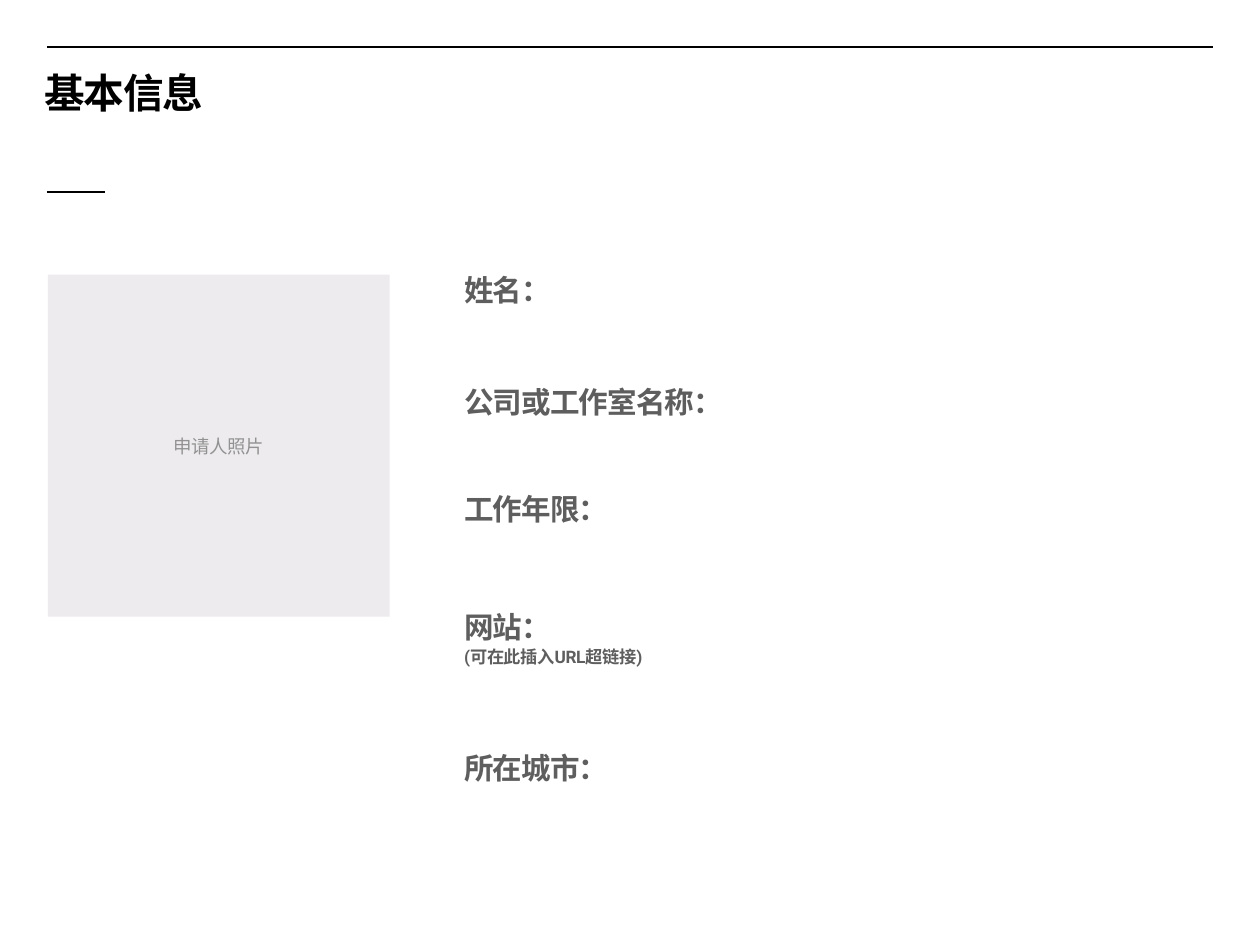
import pptx
import pptx.util
import pptx.dml.color
import pptx.enum.shapes
import pptx.enum.text
import pptx.oxml.ns
import lxml.etree

# The page is a grid of 128 columns by 96 rows of square cells.
COLUMNS, ROWS = 128, 96
CELL = pptx.util.Inches(1 / 9)
FONT = "Roboto"
BLACK, LABEL_GREY, CAPTION_GREY, PHOTO_GREY = "000000", "5E5E5E", "929292", "EDEBEE"
ALIGN = pptx.enum.text.PP_ALIGN
ANCHOR = pptx.enum.text.MSO_ANCHOR

# Each field: row below the top of the list, columns, rows, note
FIELDS = [
    ("姓名：", 0, 78, 5.1, ""),
    ("公司或工作室名称：", 11.4, 78, 5.1, ""),
    ("工作年限：", 22.23, 78, 5.1, ""),
    ("网站：", 34.25, 28, 8, "(可在此插入URL超链接)"),
    ("所在城市：", 48.6, 78, 5.1, ""),
]


def cells(count):
    return round(count * CELL)


def color(value):
    return pptx.dml.color.RGBColor.from_string(value)


def place(shape, box):
    shape.left, shape.top, shape.width, shape.height = map(cells, box)


def prepare_frame(shape, anchor=ANCHOR.TOP):
    frame = shape.text_frame
    frame.margin_left = frame.margin_right = pptx.util.Inches(0.06)
    frame.margin_top = frame.margin_bottom = pptx.util.Inches(0.06)
    frame.auto_size = pptx.enum.text.MSO_AUTO_SIZE.NONE
    frame.vertical_anchor = anchor
    frame.word_wrap = True
    return frame


def write(para, text, size, ink, tracking, bold=True, align=ALIGN.LEFT):
    """Add one run; tracking is in hundredths of a point."""
    para.alignment = align
    para.line_spacing = 1.1
    para.space_before = pptx.util.Pt(0)
    span = para.add_run()
    span.text = text
    span.font.size = pptx.util.Pt(size)
    span.font.bold = bold
    span.font.name = FONT
    span.font.color.rgb = color(ink)
    properties = span.font._element
    properties.set("lang", "zh-CN")
    properties.set("spc", str(tracking))
    east_asian = lxml.etree.SubElement(properties, pptx.oxml.ns.qn("a:ea"))
    east_asian.set("typeface", FONT)


def add_rule(page, left, top, width):
    rule = page.shapes.add_connector(
        pptx.enum.shapes.MSO_CONNECTOR.STRAIGHT,
        cells(left), cells(top), cells(left + width), cells(top))
    rule.line.color.rgb = color(BLACK)
    rule.line.width = pptx.util.Pt(2)
    lxml.etree.SubElement(rule._element.spPr, pptx.oxml.ns.qn("a:effectLst"))


def add_heading(page, box):
    """Title between a full-width rule and a short one."""
    left, top, width, height = box
    add_rule(page, left, top, width)
    add_rule(page, left, top + height, 5.94)
    title = page.shapes.title
    place(title, (left - 0.8, top + 1.08, width / 3, 6.4))
    frame = prepare_frame(title, ANCHOR.MIDDLE)
    write(frame.paragraphs[0], "基本信息", 33, BLACK, -100)


def add_photo_area(page, box):
    left, top, width, height = box
    area = page.shapes.add_shape(
        pptx.enum.shapes.MSO_SHAPE.RECTANGLE, *map(cells, box))
    area.shadow.inherit = False
    area.fill.solid()
    area.fill.fore_color.rgb = color(PHOTO_GREY)
    area.line.fill.background()
    caption_width, caption_height = 12.8, 3.6
    caption = page.shapes.add_textbox(*map(cells, (
        left + (width - caption_width) / 2, top + (height - caption_height) / 2,
        caption_width, caption_height)))
    write(prepare_frame(caption).paragraphs[0], "申请人照片", 15, CAPTION_GREY,
          -30, bold=False, align=ALIGN.CENTER)


def add_fields(page, left, top):
    for label, offset, width, height, note in FIELDS:
        field = page.shapes.add_textbox(
            *map(cells, (left, top + offset, width, height)))
        frame = prepare_frame(field)
        write(frame.paragraphs[0], label, 24, LABEL_GREY, -70)
        if note:
            write(frame.add_paragraph(), note, 14, LABEL_GREY, -40)


def main():
    deck = pptx.Presentation()
    deck.slide_width, deck.slide_height = cells(COLUMNS), cells(ROWS)
    page = deck.slides.add_slide(deck.slide_layouts.get_by_name("Title Only"))
    add_heading(page, (4.77, 4.8, 118.44, 14.73))
    add_photo_area(page, (4.86, 27.9, 34.74, 34.74))
    add_fields(page, 46.62, 26.73)
    deck.save("out.pptx")


if __name__ == "__main__":
    main()
